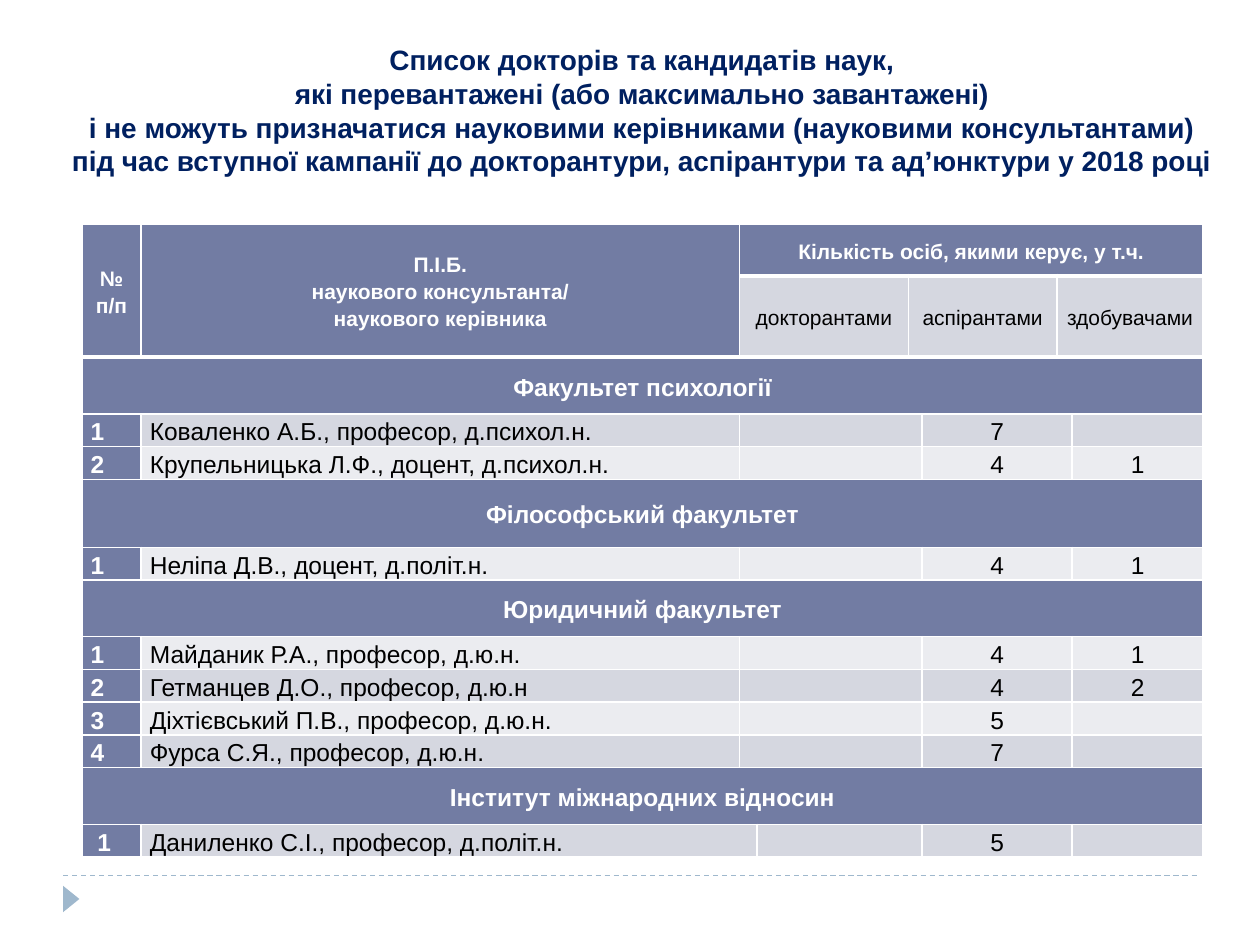
import pptx
import pptx.dml.color
import pptx.enum.dml
import pptx.enum.shapes
import pptx.enum.text
import pptx.oxml
import pptx.oxml.ns
import pptx.util
from lxml import etree
from pptx.util import Inches

COLORS = {
    "title": "002060", "header": "727CA3", "odd": "D5D7E0", "even": "EBECF0",
    "white": "FFFFFF", "black": "000000", "accent": "9FB8CD",
}
TITLE_LINES = [
    "Список докторів та кандидатів наук,",
    "які перевантажені (або максимально завантажені)",
    "і не можуть призначатися науковими керівниками (науковими консультантами) "
    "під час вступної кампанії до докторантури, аспірантури та ад’юнктури у 2018 році",
]
# Faculty, heading height, supervisors: number, name, postgraduates, applicants
FACULTIES = [
    ("Факультет психології", 0.45, [
        ("1", "Коваленко А.Б., професор, д.психол.н.", "7", ""),
        ("2", "Крупельницька Л.Ф., доцент, д.психол.н.", "4", "1")]),
    ("Філософський факультет", 0.54, [
        ("1", "Неліпа Д.В., доцент, д.політ.н.", "4", "1")]),
    ("Юридичний факультет", 0.45, [
        ("1", "Майданик Р.А., професор, д.ю.н.", "4", "1"),
        ("2", "Гетманцев Д.О., професор, д.ю.н", "4", "2"),
        ("3", "Діхтієвський П.В., професор, д.ю.н.", "5", ""),
        ("4", "Фурса С.Я., професор, д.ю.н.", "7", "")]),
    ("Інститут міжнародних відносин", 0.45, [
        ("\u00a01", "Даниленко С.І., професор, д.політ.н.", "5", "")]),
]
COLUMN_WIDTHS = [0.47, 4.75, 0.14, 1.2, 0.11, 1.07, 0.12, 1.04]
HEADER_HEIGHTS = [0.41, 0.47]
PERSON_HEIGHT = 0.26
CENTER = pptx.enum.text.PP_ALIGN.CENTER
LEFT = pptx.enum.text.PP_ALIGN.LEFT


def rgb(name):
    return pptx.dml.color.RGBColor.from_string(COLORS[name])


def style_paragraph(paragraph, size, color, bold, align):
    paragraph.alignment = align
    font = paragraph.font
    font.name, font.size, font.bold = "Arial", pptx.util.Pt(size), bold
    font.color.rgb = rgb(color)


def add_title(slide, left, top, width, height):
    title = slide.shapes.title
    title.left, title.top, title.width, title.height = left, top, width, height
    frame = title.text_frame
    frame.word_wrap = True
    frame.auto_size = pptx.enum.text.MSO_AUTO_SIZE.NONE
    frame.vertical_anchor = pptx.enum.text.MSO_ANCHOR.TOP
    frame.text = "\n".join(TITLE_LINES)
    for paragraph in frame.paragraphs:
        style_paragraph(paragraph, 16, "title", True, CENTER)


def add_footer(slide, left, top, width):
    """Dashed rule with a small right-pointing marker under its left end."""
    rule = slide.shapes.add_connector(
        pptx.enum.shapes.MSO_CONNECTOR.STRAIGHT, left, top, left + width, top)
    rule.line.color.rgb = rgb("accent")
    rule.line.width = pptx.util.Pt(0.75)
    rule.line.dash_style = pptx.enum.dml.MSO_LINE.DASH
    etree.SubElement(rule._element.spPr, pptx.oxml.ns.qn("a:effectLst"))
    marker = slide.shapes.add_shape(
        pptx.enum.shapes.MSO_SHAPE.ISOSCELES_TRIANGLE,
        left - Inches(0.04), top + Inches(0.12), Inches(0.21), Inches(0.13))
    marker.rotation = 90
    marker.shadow.inherit = False
    marker.fill.solid()
    marker.fill.fore_color.rgb = rgb("accent")
    marker.line.fill.background()


def set_borders(cell, bottom):
    properties = cell._tc.get_or_add_tcPr()
    for position, (side, width) in enumerate(
            [("L", 1), ("R", 1), ("T", 1), ("B", bottom)]):
        properties.insert(position, pptx.oxml.parse_xml(
            f'<a:ln{side} {pptx.oxml.ns.nsdecls("a")} w="{pptx.util.Pt(width)}">'
            f'<a:solidFill><a:srgbClr val="{COLORS["white"]}"/></a:solidFill>'
            f'</a:ln{side}>'))


def fill_cell(table, row, column, text, fill, size=14, align=CENTER,
              rows=1, columns=1):
    """Write one cell, merged over the given number of rows and columns."""
    cell = table.cell(row, column)
    if rows * columns > 1:
        cell.merge(table.cell(row + rows - 1, column + columns - 1))
    cell.fill.solid()
    cell.fill.fore_color.rgb = rgb(fill)
    cell.vertical_anchor = pptx.enum.text.MSO_ANCHOR.MIDDLE
    cell.margin_left = cell.margin_right = Inches(0.07)
    cell.margin_top = cell.margin_bottom = 0
    cell.text = text
    is_header = fill == "header"
    for paragraph in cell.text_frame.paragraphs:
        paragraph.line_spacing = 1.15
        style_paragraph(paragraph, size, "white" if is_header else "black",
                        is_header, align)


def fill_header(table):
    fill_cell(table, 0, 0, "№ п/п", "header", 12, rows=2)
    fill_cell(table, 0, 1, "П.І.Б.\nнаукового консультанта/\nнаукового керівника",
              "header", 12, rows=2)
    fill_cell(table, 0, 2, "Кількість осіб, якими керує, у т.ч.", "header", 12,
              columns=6)
    for column, group in zip((2, 4, 6), ("докторантами", "аспірантами", "здобувачами")):
        fill_cell(table, 1, column, group, "odd", 12, columns=2)


def fill_person(table, row, person, name_columns):
    number, name, postgraduates, applicants = person
    band = "odd" if row % 2 else "even"
    doctoral_column = 1 + name_columns
    fill_cell(table, row, 0, number, "header", align=LEFT)
    fill_cell(table, row, 1, name, band, align=LEFT, columns=name_columns)
    fill_cell(table, row, doctoral_column, "", band, columns=5 - doctoral_column)
    fill_cell(table, row, 5, postgraduates, band, columns=2)
    fill_cell(table, row, 7, applicants, band)


def add_supervisors(slide, left, top, width, height):
    heights = list(HEADER_HEIGHTS)
    for _, heading_height, people in FACULTIES:
        heights += [heading_height] + [PERSON_HEIGHT] * len(people)
    table = slide.shapes.add_table(
        len(heights), len(COLUMN_WIDTHS), left, top, width, height).table
    table.first_row = table.horz_banding = False
    for column, column_width in zip(table.columns, COLUMN_WIDTHS):
        column.width = Inches(column_width)
    for row, row_height in zip(table.rows, heights):
        row.height = Inches(row_height)

    fill_header(table)
    row = len(HEADER_HEIGHTS)
    for faculty, _, people in FACULTIES:
        fill_cell(table, row, 0, faculty, "header", columns=len(COLUMN_WIDTHS))
        for row, person in enumerate(people, row + 1):
            name_columns = 2 if row == len(heights) - 1 else 1
            fill_person(table, row, person, name_columns)
        row += 1

    for row in range(len(heights)):
        for column in range(len(COLUMN_WIDTHS)):
            set_borders(table.cell(row, column),
                        3 if row < len(HEADER_HEIGHTS) else 1)


def main():
    deck = pptx.Presentation()
    deck.slide_width, deck.slide_height = Inches(10), Inches(7.5)
    slide = deck.slides.add_slide(deck.slide_layouts[5])
    add_footer(slide, Inches(0.5), Inches(6.95), Inches(9))
    add_title(slide, Inches(0.41), Inches(0.29), Inches(9.37), Inches(1.18))
    add_supervisors(slide, Inches(0.65), Inches(1.78), Inches(8.9), Inches(4.92))
    deck.save("out.pptx")


if __name__ == "__main__":
    main()
